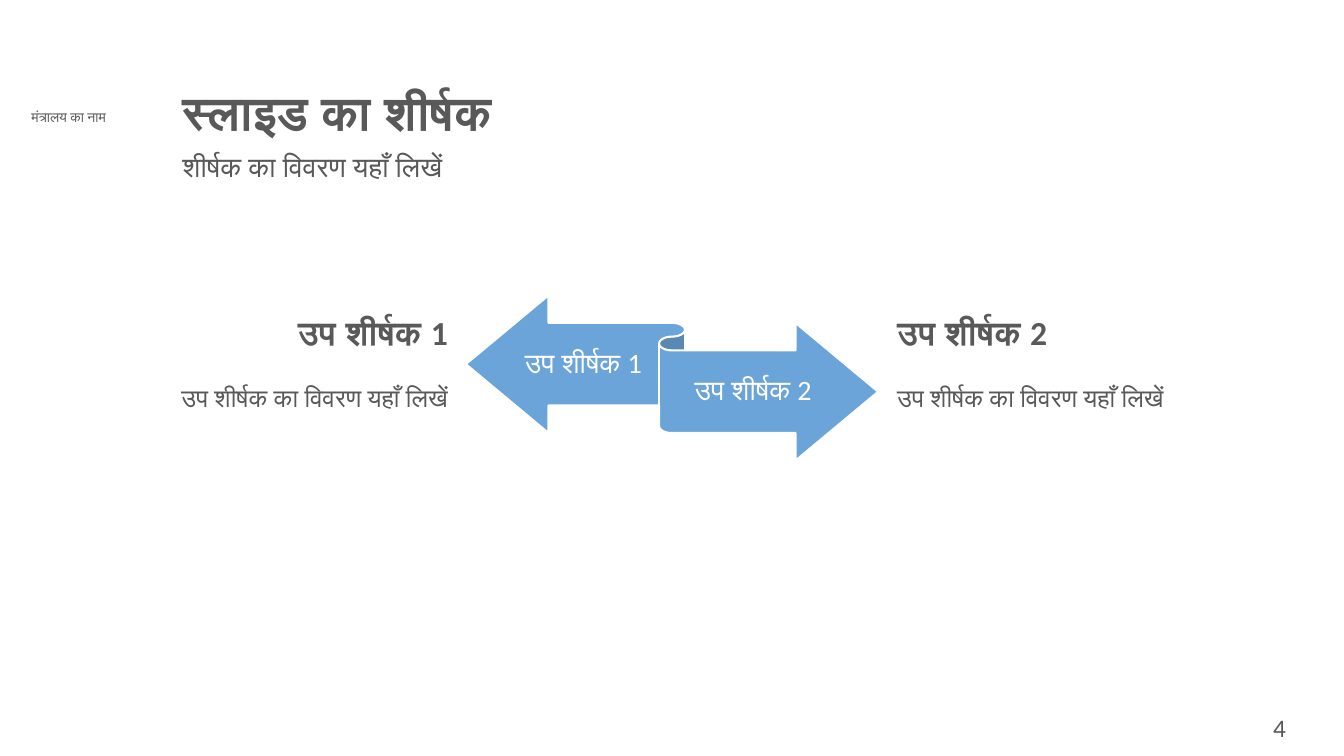
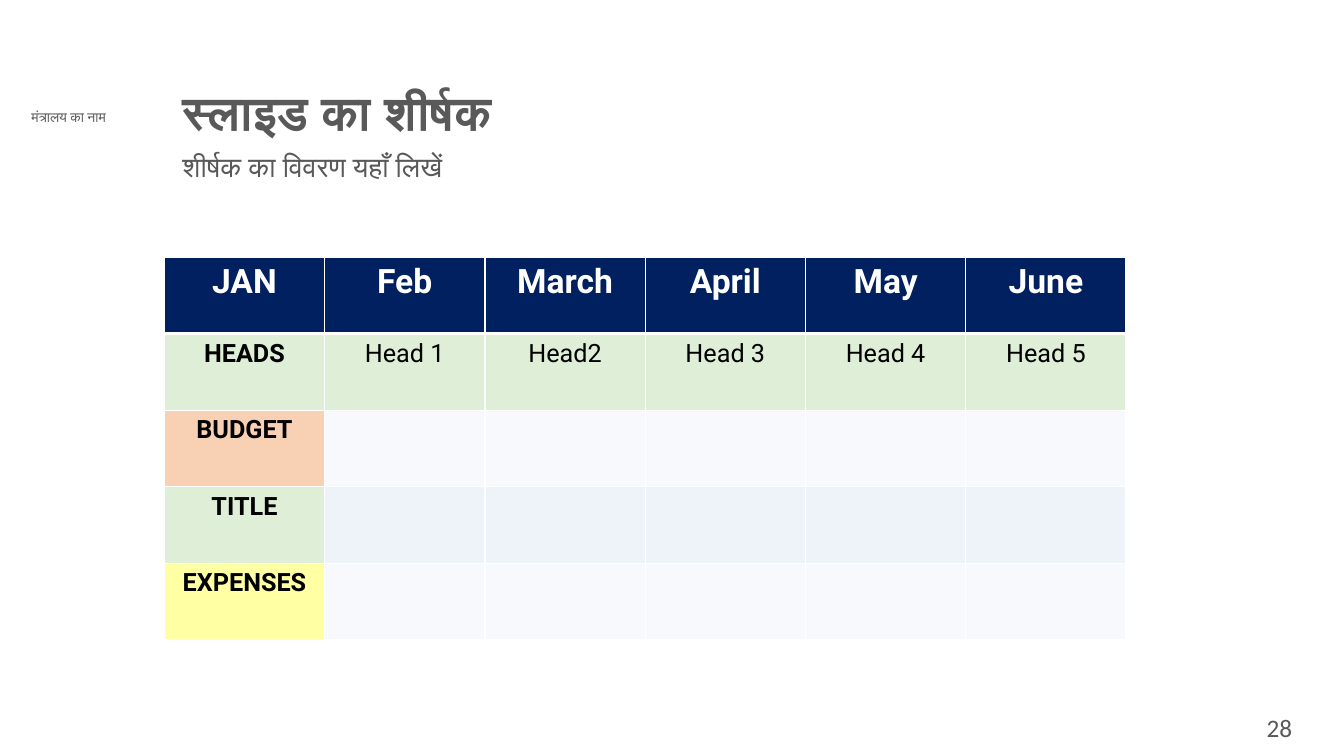
from lxml.etree import SubElement
from pptx import Presentation
from pptx.dml.color import RGBColor
from pptx.enum.shapes import MSO_SHAPE as Shape
from pptx.enum.text import MSO_ANCHOR as Anchor, MSO_AUTO_SIZE as AutoSize, PP_ALIGN as Align
from pptx.oxml import parse_xml
from pptx.oxml.ns import nsdecls, qn
from pptx.util import Pt

SCALE = 9144
COLORS = {
    "text": "595959",
    "white": "FFFFFF",
    "black": "000000",
    "ribbon": "5B9BD5",
    "navy": "002060",
    "green": "A9D18E",
    "orange": "ED7D31",
    "yellow": "FFFF00",
    "pale": "EAEFF7",
    "band": "D2DEEF",
}


def px(*lengths):
    return [length * SCALE for length in lengths]


def rgb(color):
    return RGBColor.from_string(COLORS[color])


def paint(fill, color, holder, opacity=100):
    fill.solid()
    fill.fore_color.rgb = rgb(color)
    if opacity < 100:
        tone = holder.find(qn("a:solidFill"))[0]
        SubElement(tone, qn("a:alpha")).set("val", str(opacity * 1000))


class Deck:
    font = "Calibri"
    ministry = "मंत्रालय का नाम"
    title = "स्लाइड का शीर्षक"
    subtitle = "शीर्षक का विवरण यहाँ लिखें"

    def __init__(self):
        self.prs = Presentation()
        self.prs.slide_width, self.prs.slide_height = px(1333, 750)
        self.slide = None

    def add_slide(self, number):
        self.slide = self.prs.slides.add_slide(self.prs.slide_layouts[1])
        title, subtitle = self.slide.placeholders
        self.heading(title, (171, 84, 961, 55), self.title, 34, True)
        self.heading(subtitle, (171, 147, 961, 63), self.subtitle, 20)
        self.text((3, 103, 130, 27), [(self.ministry, 10, False)], Align.CENTER)
        self.text((1210, 702, 118, 45), [(number, 18, False)], Align.CENTER)

    def style(self, paragraph, size, bold=False, color="text", align=Align.LEFT, font=None):
        paragraph.alignment = align
        paragraph.font.name = font or self.font
        paragraph.font.size = Pt(size)
        paragraph.font.bold = bold
        paragraph.font.color.rgb = rgb(color)

    def heading(self, holder, box, words, size, bold=False):
        holder.left, holder.top, holder.width, holder.height = px(*box)
        frame = holder.text_frame
        frame.text = words
        frame.auto_size = AutoSize.NONE
        frame.vertical_anchor = Anchor.TOP
        line = frame.paragraphs[0]
        line.line_spacing = 0.9
        line.space_before = Pt(0)
        props = line._p.get_or_add_pPr()
        props.set("marL", "0")
        props.set("indent", "0")
        SubElement(props, qn("a:buNone"))
        self.style(line, size, bold)

    def text(self, box, lines, align=Align.LEFT, color="text", gap=0):
        frame = self.slide.shapes.add_textbox(*px(*box)).text_frame
        frame.word_wrap = True
        for index, (words, size, bold) in enumerate(lines):
            line = frame.add_paragraph() if index else frame.paragraphs[0]
            line.text = words
            if index:
                line.space_before = Pt(gap)
            self.style(line, size, bold, color, align)
        return frame

    def arrow_label(self, box, words):
        frame = self.text(box, [(words, 20, False)], Align.CENTER, "white")
        frame.vertical_anchor = Anchor.MIDDLE
        frame.margin_left = frame.margin_right = 0
        frame.margin_top, frame.margin_bottom = px(8, 8)
        frame.paragraphs[0].line_spacing = 0.9
        frame.paragraphs[0].space_after = Pt(7)

    def ribbon(self, box):
        ribbon = self.slide.shapes.add_shape(Shape.LEFT_RIGHT_RIBBON, *px(*box))
        ribbon.shadow.inherit = False
        paint(ribbon.fill, "ribbon", ribbon._element.spPr, 90)
        ribbon.line.color.rgb = rgb("white")
        ribbon.line.width = Pt(1.5)

    def table(self, left, top, column_width, row_height, rows, fills):
        box = px(left, top, column_width * len(rows[0]), row_height * len(rows))
        grid = self.slide.shapes.add_table(len(rows), len(rows[0]), *box).table
        grid.horz_banding = False
        for r, (row, (first_fill, other_fill)) in enumerate(zip(rows, fills)):
            for c, words in enumerate(row):
                self.cell(grid.cell(r, c), words, other_fill if c else first_fill, r, c)

    def cell(self, cell, words, fill, row, column):
        header = row == 0
        props = cell._tc.get_or_add_tcPr()
        paint(cell.fill, fill, props, 100 if header else 36)
        thick = {0: "B", 1: "T"}.get(row)
        for index, side in enumerate("LRTB"):
            width = Pt(3 if side == thick else 1)
            props.insert(index, parse_xml(
                f'<a:ln{side} {nsdecls("a")} w="{width}"><a:solidFill>'
                f'<a:srgbClr val="{COLORS["white"]}"/></a:solidFill></a:ln{side}>'))
        cell.text = words
        self.style(cell.text_frame.paragraphs[0], 24 if header else 18,
                   header or column == 0, "white" if header else "black",
                   Align.CENTER, "Roboto")


def main():
    deck = Deck()

    deck.add_slide("4")
    deck.ribbon((462, 293, 409, 164))
    deck.arrow_label((511, 322, 135, 80), "उप शीर्षक 1")
    deck.arrow_label((667, 348, 160, 80), "उप शीर्षक 2")
    detail = ("उप शीर्षक का विवरण यहाँ लिखें", 18, False)
    deck.text((113, 304, 341, 111), [("उप शीर्षक 1", 24, True), detail], Align.RIGHT, gap=22)
    deck.text((880, 304, 318, 141), [("उप शीर्षक 2", 24, True), detail], gap=22)

    deck.add_slide("28")
    blanks = [""] * 5
    rows = [
        ["JAN", "Feb", "March", "April", "May", "June"],
        ["HEADS", "Head 1", "Head2", "Head 3", "Head 4", "Head 5"],
        ["BUDGET", *blanks],
        ["TITLE", *blanks],
        ["EXPENSES", *blanks],
    ]
    fills = [("navy", "navy"), ("green", "green"), ("orange", "pale"),
             ("green", "band"), ("yellow", "pale")]
    deck.table(163, 255, 159, 76, rows, fills)

    deck.prs.save("out.pptx")


if __name__ == "__main__":
    main()
